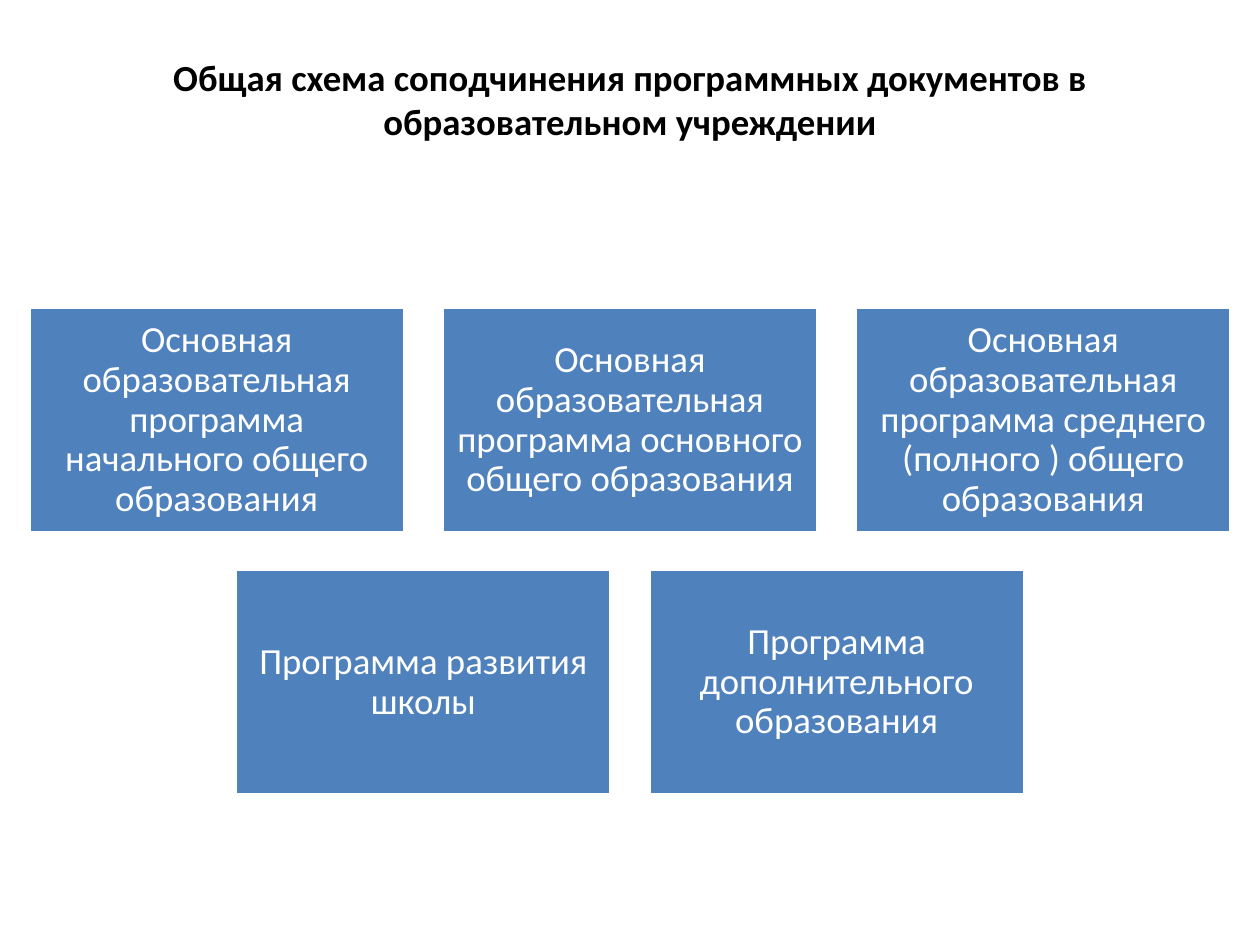
from dataclasses import dataclass

from pptx import Presentation
from pptx.dml.color import RGBColor
from pptx.enum import shapes, text
from pptx.slide import Slide
from pptx.util import Inches, Pt

BLACK = RGBColor(0x00, 0x00, 0x00)
WHITE = RGBColor(0xFF, 0xFF, 0xFF)
BLUE = RGBColor(0x4F, 0x81, 0xBD)

FONT = "Calibri"
FONT_SIZE = Pt(21)
SLIDE_WIDTH = Inches(10)
SLIDE_HEIGHT = Inches(7.5)
BOX_WIDTH = Inches(2.98)
BOX_HEIGHT = Inches(1.79)
BOX_GAP = Inches(0.3)
BOX_MARGIN = Inches(0.09)

TITLE = "Общая схема соподчинения программных документов в образовательном учреждении"


@dataclass(frozen=True)
class ProgramRow:
    top: int
    programs: tuple[str, ...]


ROWS = (
    ProgramRow(
        Inches(2.44),
        (
            "Основная образовательная программа начального общего образования",
            "Основная образовательная программа основного общего образования",
            "Основная образовательная программа среднего (полного ) общего образования",
        ),
    ),
    ProgramRow(
        Inches(4.52),
        ("Программа развития школы", "Программа дополнительного образования"),
    ),
)


def format_text(frame: text.MSO_ANCHOR, content: str, color: RGBColor, bold: bool) -> None:
    frame.text = content
    frame.word_wrap = True
    frame.vertical_anchor = text.MSO_ANCHOR.MIDDLE
    paragraph = frame.paragraphs[0]
    paragraph.alignment = text.PP_ALIGN.CENTER
    paragraph.font.name = FONT
    paragraph.font.size = FONT_SIZE
    paragraph.font.bold = bold
    paragraph.font.color.rgb = color


def add_title(slide: Slide) -> None:
    title = slide.shapes.title
    title.left, title.top = Inches(0.5), Inches(0.16)
    title.width, title.height = Inches(9), Inches(1.25)
    format_text(title.text_frame, TITLE, BLACK, bold=True)


def add_program(slide: Slide, left: int, top: int, program: str) -> None:
    shape = slide.shapes.add_shape(
        shapes.MSO_SHAPE.RECTANGLE, left, top, BOX_WIDTH, BOX_HEIGHT
    )
    shape.shadow.inherit = False
    shape.fill.solid()
    shape.fill.fore_color.rgb = BLUE
    shape.line.color.rgb = WHITE
    shape.line.width = Pt(2)
    frame = shape.text_frame
    frame.margin_left = frame.margin_right = BOX_MARGIN
    frame.margin_top = frame.margin_bottom = BOX_MARGIN
    format_text(frame, program, WHITE, bold=False)
    frame.paragraphs[0].line_spacing = 0.9


def add_row(slide: Slide, row: ProgramRow) -> None:
    pitch = BOX_WIDTH + BOX_GAP
    row_width = len(row.programs) * pitch - BOX_GAP
    row_left = (SLIDE_WIDTH - row_width) // 2
    for index, program in enumerate(row.programs):
        add_program(slide, row_left + index * pitch, row.top, program)


def main() -> None:
    presentation = Presentation()
    presentation.slide_width = SLIDE_WIDTH
    presentation.slide_height = SLIDE_HEIGHT
    slide = presentation.slides.add_slide(presentation.slide_layouts[5])
    add_title(slide)
    for row in ROWS:
        add_row(slide, row)
    presentation.save("out.pptx")


if __name__ == "__main__":
    main()
